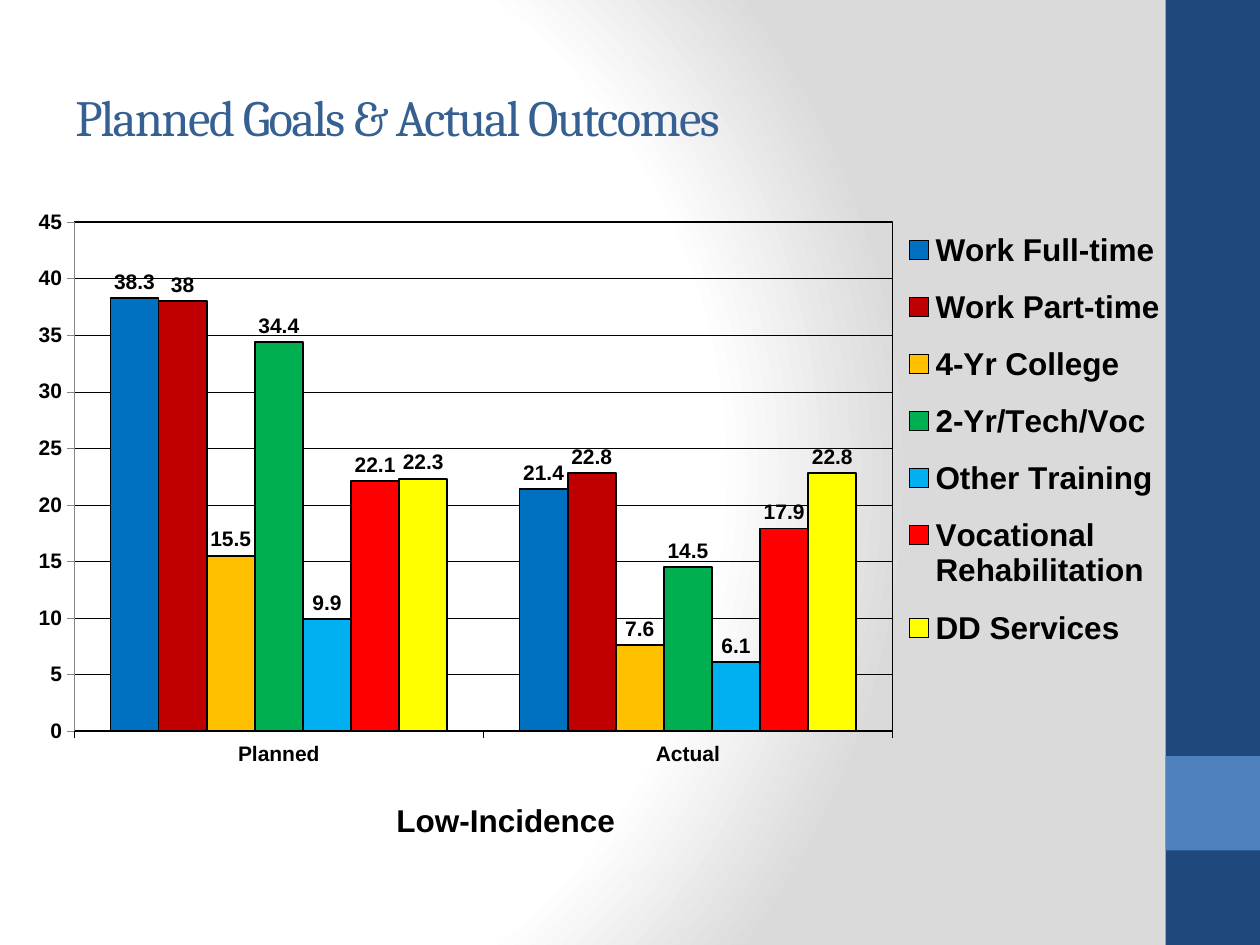
from pptx import Presentation
from pptx.chart.data import CategoryChartData
from pptx.dml.color import RGBColor
from pptx.enum import chart as ch, shapes, text
from pptx.oxml import parse_xml
from pptx.oxml.ns import nsdecls, qn
from pptx.util import Pt

COLORS = {
    "navy": "1F497D", "blue": "4F81BD", "title": "376092", "black": "000000",
    "axis": "868686", "white": "FFFFFF", "gray": "DADADA",
}
SERIES = [
    ("Work Full-time", (38.3, 21.4), "0070C0"),
    ("Work Part-time", (38, 22.8), "C00000"),
    ("4-Yr College", (15.5, 7.6), "FFC000"),
    ("2-Yr/Tech/Voc", (34.4, 14.5), "00B050"),
    ("Other Training", (9.9, 6.1), "00B0F0"),
    ("Vocational Rehabilitation", (22.1, 17.9), "FF0000"),
    ("DD Services", (22.3, 22.8), "FFFF00"),
]


def rgb(name):
    """Return the colour for a palette name or a hex string."""
    return RGBColor.from_string(COLORS.get(name, name))


class SlideBuilder:
    """Hold the style and the current slide."""

    font = "Arial"

    def __init__(self, prs):
        self.s = prs.slides.add_slide(prs.slide_layouts[6])

    def background(self, stops, left, top, right, bottom):
        """Fill the background with a circular gradient."""
        self.s.background.fill.gradient()
        old = self.s._element.find(".//" + qn("a:gradFill"))
        gs = "".join(
            f'<a:gs pos="{pos * 1000}"><a:srgbClr val="{COLORS[c]}"/></a:gs>'
            for pos, c in stops)
        old.getparent().replace(old, parse_xml(
            f'<a:gradFill {nsdecls("a")} rotWithShape="1"><a:gsLst>{gs}</a:gsLst>'
            f'<a:path path="circle"><a:fillToRect l="{left * 1000}" t="{top * 1000}" '
            f'r="{right * 1000}" b="{bottom * 1000}"/></a:path></a:gradFill>'))

    def rect(self, box, color):
        """Add a plain filled rectangle."""
        sp = self.s.shapes.add_shape(shapes.MSO_SHAPE.RECTANGLE, *map(Pt, box))
        sp.shadow.inherit = False
        sp.fill.solid()
        sp.fill.fore_color.rgb = rgb(color)
        sp.line.fill.background()

    def label(self, box, words, size, color="black", font=None, bold=False,
              align=text.PP_ALIGN.LEFT, spacing=0):
        """Add a vertically centred line of text."""
        tf = self.s.shapes.add_textbox(*map(Pt, box)).text_frame
        tf.word_wrap = True
        tf.vertical_anchor = text.MSO_ANCHOR.MIDDLE
        tf.text = words
        p = tf.paragraphs[0]
        p.alignment = align
        r = p.runs[0]
        self.style(r.font, size, color, font, bold)
        if spacing:
            r._r.get_or_add_rPr().set("spc", str(spacing * 100))

    def style(self, f, size, color="black", font=None, bold=True):
        """Set size, colour, face and weight of a font."""
        f.size, f.bold, f.name = Pt(size), bold, font or self.font
        f.color.rgb = rgb(color)

    def line(self, ln, width, color="black"):
        """Set colour and width of a line."""
        ln.color.rgb = rgb(color)
        ln.width = Pt(width)

    def layout(self, parent, x, y, w, h, inner=False):
        """Return a manual layout for a part of the chart."""
        for old in parent.findall(qn("c:layout")):
            parent.remove(old)
        target = '<c:layoutTarget val="inner"/>' if inner else ""
        return parse_xml(
            f'<c:layout {nsdecls("c")}><c:manualLayout>{target}'
            f'<c:xMode val="edge"/><c:yMode val="edge"/><c:x val="{x}"/>'
            f'<c:y val="{y}"/><c:w val="{w}"/><c:h val="{h}"/>'
            f'</c:manualLayout></c:layout>')

    def columns(self, box, categories, series):
        """Add a clustered column chart with labels and a legend."""
        data = CategoryChartData()
        data.categories = categories
        for name, values, _ in series:
            data.add_series(name, values)
        chart = self.s.shapes.add_chart(
            ch.XL_CHART_TYPE.COLUMN_CLUSTERED, *map(Pt, box), data).chart
        self.style(chart.font, 12)
        chart.has_title = False
        plot = chart.plots[0]
        plot.gap_width, plot.overlap, plot.vary_by_categories = 150, 0, False
        for ser, (_, _, color) in zip(plot.series, series):
            ser.format.fill.solid()
            ser.format.fill.fore_color.rgb = rgb(color)
            self.line(ser.format.line, 1)
            labels = ser.data_labels
            labels.show_value = True
            labels.position = ch.XL_LABEL_POSITION.OUTSIDE_END
            self.style(labels.font, 12)

        for axis, color in ((chart.category_axis, "black"), (chart.value_axis, "axis")):
            axis.major_tick_mark = ch.XL_TICK_MARK.OUTSIDE
            self.style(axis.tick_labels.font, 12)
            self.line(axis.format.line, 0.25, color)
        chart.category_axis.tick_label_position = ch.XL_TICK_LABEL_POSITION.LOW
        axis = chart.value_axis
        axis.minimum_scale, axis.maximum_scale, axis.major_unit = 0, 45, 5
        self.line(axis.major_gridlines.format.line, 0.25)

        chart.has_legend = True
        legend = chart.legend
        legend.position = ch.XL_LEGEND_POSITION.RIGHT
        legend.include_in_layout = False
        self.style(legend.font, 18)
        el = legend._element
        el.find(qn("c:legendPos")).addnext(self.layout(el, 0.75, 0.02, 0.22, 0.79))
        area = chart._chartSpace.find(".//" + qn("c:plotArea"))
        area.insert(0, self.layout(area, 0.05, 0.04, 0.69, 0.88, inner=True))
        area.append(parse_xml(
            f'<c:spPr {nsdecls("c", "a")}><a:noFill/><a:ln w="{Pt(1)}"><a:solidFill>'
            f'<a:srgbClr val="{COLORS["black"]}"/></a:solidFill></a:ln></c:spPr>'))


def main():
    """Build and save the slide."""
    prs = Presentation()
    prs.slide_width, prs.slide_height = Pt(720), Pt(540)
    b = SlideBuilder(prs)
    b.background([(0, "white"), (75, "white"), (100, "gray")], 20, 50, 100, 50)
    b.rect((666, 0, 54, 540), "navy")
    b.rect((666, 432, 54, 54), "blue")
    b.label((36, 21.6, 599.76, 90), "Planned Goals & Actual Outcomes", 29,
            "title", "Cambria", spacing=-1)
    b.columns((8.64, 113.76, 677.52, 330.48), ("Planned", "Actual"), SERIES)
    b.label((133.2, 454.32, 311.76, 28.8), "Low-Incidence", 18, bold=True,
            align=text.PP_ALIGN.CENTER)
    prs.save("out.pptx")


if __name__ == "__main__":
    main()
